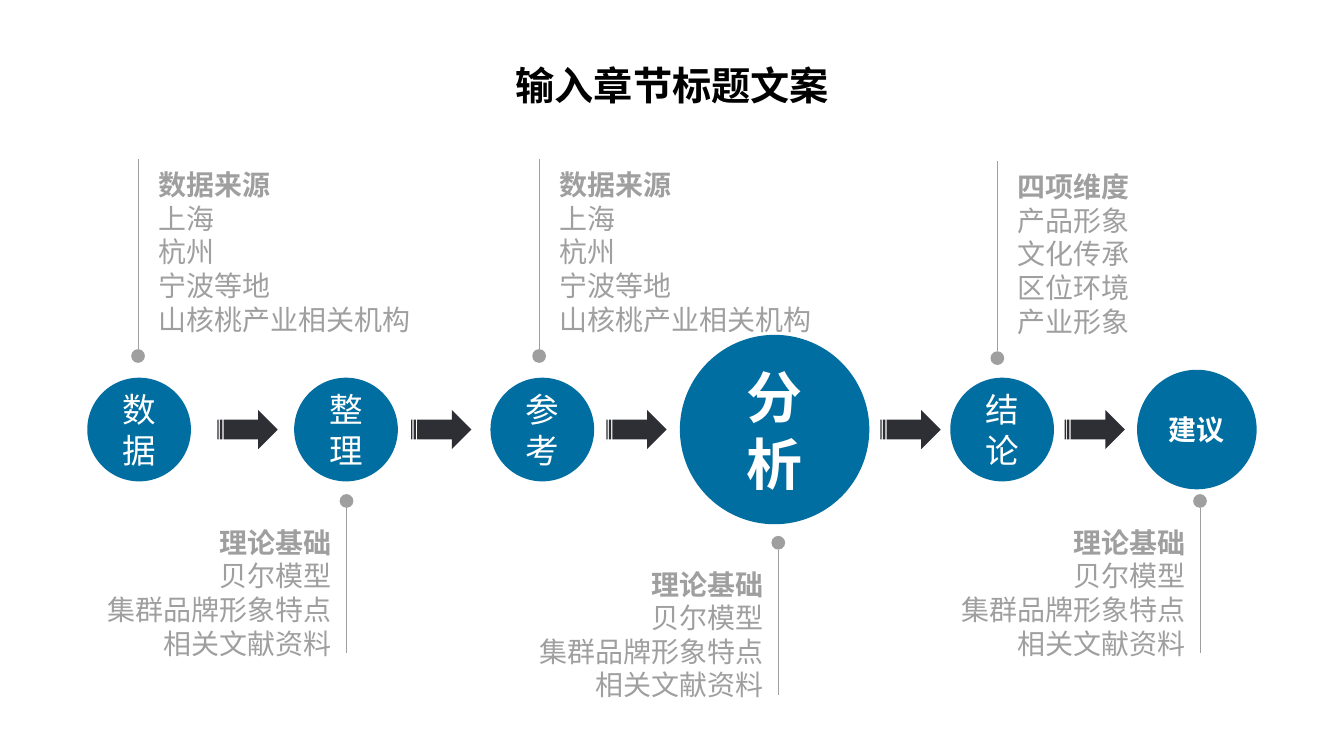
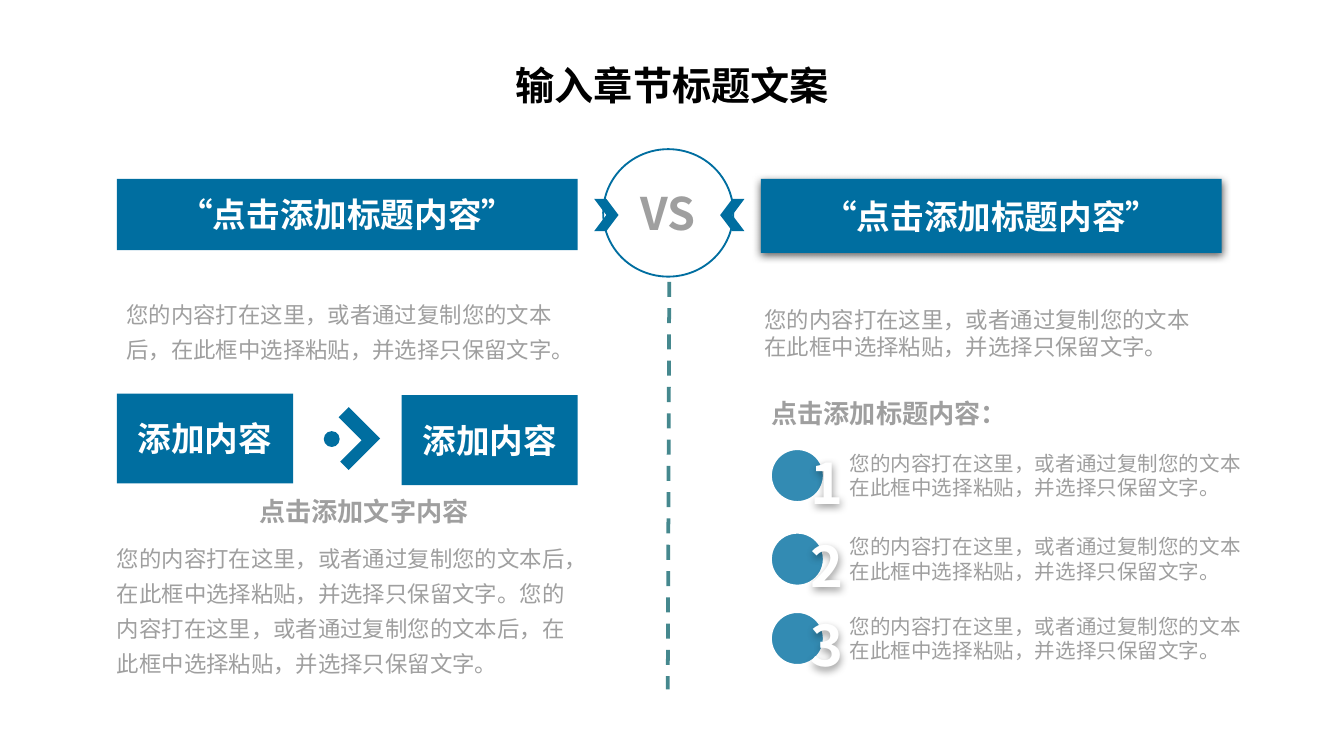
from lxml.etree import SubElement
from pptx import Presentation
from pptx.dml.color import RGBColor
from pptx.enum.dml import MSO_LINE
from pptx.enum.shapes import MSO_CONNECTOR, MSO_SHAPE
from pptx.enum.text import MSO_ANCHOR, MSO_AUTO_SIZE, PP_ALIGN
from pptx.oxml.ns import qn
from pptx.util import Cm, Pt

FONT = "Noto Sans CJK SC"
BLUE, GRAY, DARK = "006EA0", "9F9F9F", "2E2E35"
TEAL, WHITE, BLACK = "45888E", "FFFFFF", "000000"
LEFT, MID, RIGHT = PP_ALIGN.LEFT, PP_ALIGN.CENTER, PP_ALIGN.RIGHT
TIGHT = (0.18, 0.1)
WIDE = (0.25, 0.13)

SOURCES = ["数据来源", "上海", "杭州", "宁波等地", "山核桃产业相关机构"]
THEORY = ["理论基础", "贝尔模型", "集群品牌形象特点", "相关文献资料"]
ASPECTS = ["四项维度", "产品形象", "文化传承", "区位环境", "产业形象"]
PASTE = "您的内容打在这里，或者通过复制您的文本后，在此框中选择粘贴，并选择只保留文字。"
PAIR = ["您的内容打在这里，或者通过复制您的文本", "在此框中选择粘贴，并选择只保留文字。"]


def color(code):
    return RGBColor.from_string(code)


def place(shape, box):
    shape.left, shape.top, shape.width, shape.height = map(Cm, box)


def pad(frame, inset):
    frame.margin_left = frame.margin_right = Cm(inset[0])
    frame.margin_top = frame.margin_bottom = Cm(inset[1])


def write(frame, lines, size, tint, bold=0, align=LEFT, pitch=None):
    """Fill a frame, one paragraph a line; the first `bold` lines are bold."""
    for i, line in enumerate(lines):
        para = frame.paragraphs[0] if i == 0 else frame.add_paragraph()
        para.alignment = align
        if pitch:
            para.line_spacing = pitch
        run = para.add_run()
        run.text = line
        font = run.font
        font.size, font.bold, font.name = Pt(size), i < bold, FONT
        font.color.rgb = color(tint)
        SubElement(run._r.get_or_add_rPr(), qn("a:ea"), typeface=FONT)


def paint(item, fill, line=None, width=1):
    item.shadow.inherit = False
    item.fill.solid()
    item.fill.fore_color.rgb = color(fill)
    if line:
        item.line.color.rgb = color(line)
        item.line.width = Pt(width)
    else:
        item.line.fill.background()


def shape(slide, kind, box, fill=BLUE, line=None, width=1):
    item = slide.shapes.add_shape(kind, *map(Cm, box))
    paint(item, fill, line, width)
    return item


def label(slide, kind, box, words, size, bold=1, inset=WIDE):
    item = shape(slide, kind, box)
    pad(item.text_frame, inset)
    write(item.text_frame, [words], size, WHITE, bold, MID)
    return item


def text(slide, box, lines, size, tint=GRAY, bold=0, align=LEFT,
         pitch=None, inset=TIGHT, wrap=True):
    item = slide.shapes.add_textbox(*map(Cm, box))
    frame = item.text_frame
    frame.word_wrap = wrap
    frame.auto_size = MSO_AUTO_SIZE.SHAPE_TO_FIT_TEXT
    pad(frame, inset)
    write(frame, lines, size, tint, bold, align, pitch)
    return item


def rule(slide, start, end, tint, width, dash=None):
    item = slide.shapes.add_connector(
        MSO_CONNECTOR.STRAIGHT, *map(Cm, start + end))
    item.line.color.rgb = color(tint)
    item.line.width = Pt(width)
    if dash:
        item.line.dash_style = dash
    SubElement(item._element.spPr, qn("a:effectLst"))


def shade(item, alpha):
    """Give a soft shadow straight below; alpha in percent."""
    item.shadow.inherit = False
    effects = item._element.spPr.find(qn("a:effectLst"))
    cast = SubElement(effects, qn("a:outerShdw"), blurRad=str(Pt(4.5)),
                      dist=str(Pt(1.5)), dir="5400000", rotWithShape="0")
    tint = SubElement(cast, qn("a:srgbClr"), val=BLACK)
    SubElement(tint, qn("a:alpha"), val=str(alpha * 1000))


def fade(item, alpha):
    """Make a solid fill partly clear; alpha in percent."""
    tint = item._element.spPr.find(qn("a:solidFill")).find(qn("a:srgbClr"))
    SubElement(tint, qn("a:alpha"), val=str(alpha * 1000))


def page(deck):
    """Add a slide with the shared title."""
    slide = deck.slides.add_slide(deck.slide_layouts[5])
    title = slide.shapes.title
    place(title, (8.69, 1.04, 8.03, 1.14))
    frame = title.text_frame
    frame.word_wrap = True
    frame.auto_size = MSO_AUTO_SIZE.SHAPE_TO_FIT_TEXT
    frame.vertical_anchor = MSO_ANCHOR.TOP
    write(frame, ["输入章节标题文案"], 21, BLACK, 1, MID)
    return slide


def note(slide, x, y, lines, width, above):
    """Draw a dot, a thin rule from it at (x, y), and lines beside the rule."""
    dot = 0.26
    if above:
        top, end, align = y, y - 3.6, LEFT
        box = (x + 0.13, y - 3.56, width, 3.45)
    else:
        top, end, align = y - dot, y + 2.74, RIGHT
        box = (x - 0.03 - width, y + 0.2, width, 2.82)
    shape(slide, MSO_SHAPE.OVAL, (x - dot / 2, top, dot, dot), GRAY)
    rule(slide, (x, y), (x, end), GRAY, 0.5)
    text(slide, box, lines, 15, bold=1, align=align, inset=WIDE, wrap=False)


def flow(deck):
    slide = page(deck)
    axis = 8.12
    steps = [("数据", 2.63, 1.96, 18, 0), ("整理", 6.54, 1.96, 18, 0),
             ("参考", 10.25, 1.96, 18, 0), ("分析", 14.64, 3.58, 30, 1),
             ("结论", 18.94, 1.96, 18, 0), ("建议", 22.62, 2.26, 15, 1)]
    for words, x, size, points, bold in steps:
        box = (x - size / 2, axis - size / 2, size, size)
        label(slide, MSO_SHAPE.OVAL, box, words, points, bold)
    for x in (4.11, 7.77, 11.46, 16.64, 20.12):
        shape(slide, MSO_SHAPE.STRIPED_RIGHT_ARROW,
              (x, axis - 0.37, 1.14, 0.74), DARK)
    note(slide, 2.61, 6.6, SOURCES, 5.33, True)
    note(slide, 10.19, 6.6, SOURCES, 5.33, True)
    note(slide, 18.85, 6.64, ASPECTS, 2.64, True)
    for x, y in ((6.55, 9.6), (14.71, 10.39), (22.68, 9.6)):
        note(slide, x, y, THEORY, 4.78, False)


def tip(slide, x, y, size):
    """Draw an L outline, turned so that its corner points right."""
    foot, stem = 0.32 * size, 0.27 * size
    spots = [(0, 0), (stem, 0), (stem, size - foot), (size, size - foot),
             (size, size), (0, size)]
    first, *rest = [(Cm(x + dx), Cm(y + dy)) for dx, dy in spots]
    pen = slide.shapes.build_freeform(*first)
    pen.add_line_segments(rest, close=True)
    item = pen.convert_to_shape()
    paint(item, BLUE)
    item.rotation = 225


def point(slide, number, top):
    """Draw a numbered disc and its two lines of text."""
    left, size = 14.5, 1.14
    disc = shape(slide, MSO_SHAPE.OVAL, (left, top, size, size),
                 BLUE, WHITE, 5)
    fade(disc, 80)
    digit = text(slide, (left + 0.61, top - 0.08, 0.46, 1.55), [str(number)],
                 30, WHITE, 1, MID, inset=WIDE)
    shade(digit, 40)
    text(slide, (15.88, top, 7.87, 1.14), PAIR, 11)


def versus(deck):
    slide = page(deck)
    rule(slide, (12.65, 4.83), (12.62, 13.03), TEAL, 2, MSO_LINE.DASH)
    ring = shape(slide, MSO_SHAPE.OVAL, (11.4, 2.82, 2.46, 2.41), WHITE, BLUE)
    write(ring.text_frame, ["VS"], 24, GRAY, 1, MID)
    for x, turn in ((11.23, 0), (13.61, 180)):
        mark = shape(slide, MSO_SHAPE.CHEVRON, (x, 3.76, 0.46, 0.61))
        mark.rotation = turn
    heads = [label(slide, MSO_SHAPE.RECTANGLE, (x, 3.38, 8.71, high),
                   "“点击添加标题内容”", 18)
             for x, high in ((2.21, 1.35), (14.38, 1.4))]
    shade(heads[1], 63)

    text(slide, (2.21, 5.44, 8.71, 1.45), [PASTE], 12, pitch=1.3)
    for x, y in ((2.21, 7.44), (7.59, 7.47)):
        label(slide, MSO_SHAPE.RECTANGLE, (x, y, 3.33, 1.7),
              "添加内容", 18, inset=TIGHT)
    tip(slide, 6.17, 7.87, 0.84)
    shape(slide, MSO_SHAPE.OVAL, (6.12, 8.15, 0.3, 0.3))
    text(slide, (4.72, 9.27, 4.37, 0.79), ["点击添加文字内容"], 14,
         bold=1, wrap=False)
    text(slide, (2.03, 10.06, 8.89, 2.79), [PASTE * 2], 12, pitch=1.3)

    text(slide, (14.27, 5.69, 8.99, 1.22), PAIR, 12)
    text(slide, (14.4, 7.42, 5.99, 0.79), ["点击添加标题内容："], 14, bold=1)
    for number, top in enumerate((8.42, 10, 11.5), 1):
        point(slide, number, top)


def main():
    deck = Presentation()
    deck.slide_width, deck.slide_height = Cm(25.4), Cm(14.29)
    flow(deck)
    versus(deck)
    deck.save("out.pptx")


if __name__ == "__main__":
    main()
